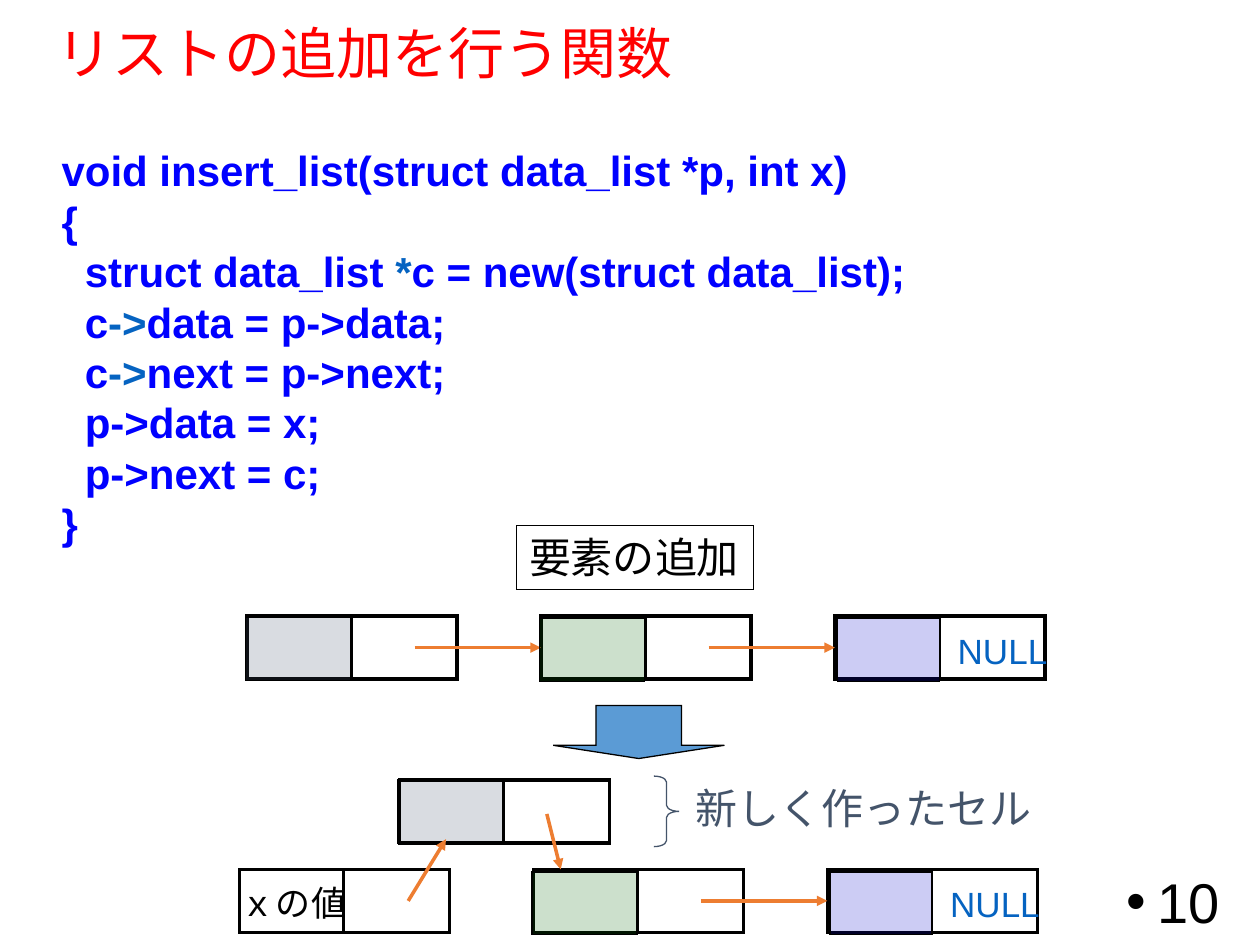
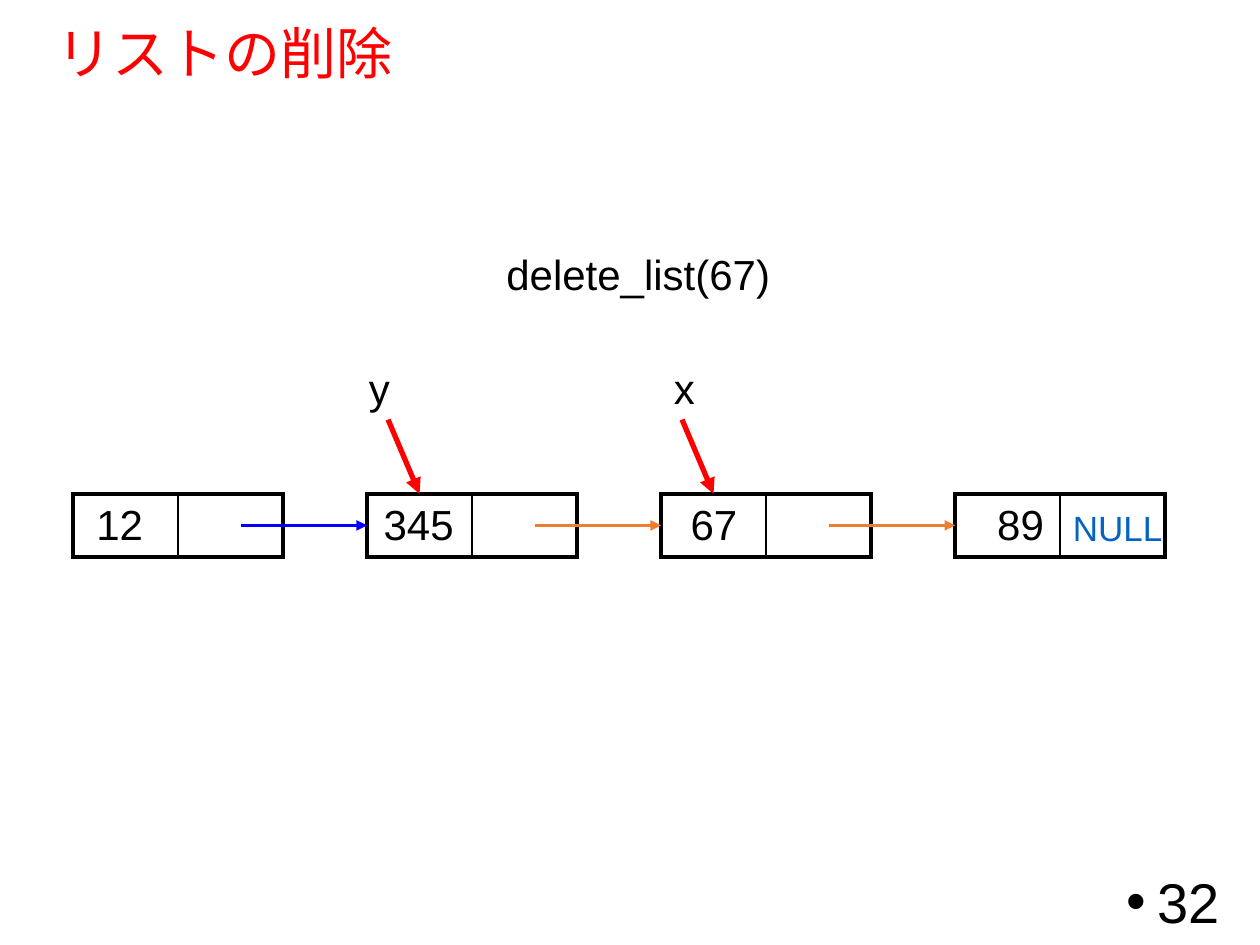
from dataclasses import dataclass

import pptx
import pptx.dml.color
import pptx.enum.shapes
import pptx.enum.text
import pptx.oxml.ns
import pptx.util
from lxml import etree

Inches = pptx.util.Inches
Pt = pptx.util.Pt
Shapes = pptx.enum.shapes.MSO_SHAPE
Align = pptx.enum.text.PP_ALIGN
Anchor = pptx.enum.text.MSO_ANCHOR
qn = pptx.oxml.ns.qn


@dataclass(frozen=True)
class Theme:
    font: str = "Arial"
    black: str = "000000"
    red: str = "FF0000"
    blue: str = "0000FF"
    link: str = "0563C1"
    slate: str = "44546A"
    green: str = "006600"
    indigo: str = "0000C8"
    orange: str = "ED7D31"
    arrow_block: str = "5B9BD5"
    title_size: float = 32
    body_size: float = 24
    small_size: float = 20
    code_leading: float = 28.8
    thin: float = 0.75
    thick: float = 2
    pointer: float = 3
    shade_alpha: int = 20


CELL_WIDTH = 5 / 3
CELL_HEIGHT = 0.5
HALF = CELL_WIDTH / 2
PITCH = 7 / 3
LINK_START = 1.33


class Deck:
    def __init__(self, theme):
        self.theme = theme
        self.presentation = pptx.Presentation()
        self.presentation.slide_width = Inches(10)
        self.presentation.slide_height = Inches(7.5)
        self.slide = None

    def color(self, value):
        return pptx.dml.color.RGBColor.from_string(value)

    def new_slide(self, title, number):
        theme = self.theme
        self.slide = self.presentation.slides.add_slide(self.presentation.slide_layouts[6])
        heading = self.text(0.35, 0.19, 9.25, 0.51, title, size=theme.title_size,
                            color=theme.red, anchor=Anchor.MIDDLE, wrap=True)
        heading.text_frame.paragraphs[0].line_spacing = 0.9
        footer = self.text(7.53, 6.95, 2.25, 0.4, number, size=theme.title_size,
                           anchor=Anchor.MIDDLE, align=Align.RIGHT, wrap=True)
        properties = footer.text_frame.paragraphs[0]._p.get_or_add_pPr()
        properties.set("marL", str(Inches(0.25)))
        properties.set("indent", str(-Inches(0.25)))
        etree.SubElement(properties, qn("a:buFont")).set("typeface", theme.font)
        etree.SubElement(properties, qn("a:buChar")).set("char", "•")

    def run(self, paragraph, text, size, color, bold=False):
        run = paragraph.add_run()
        run.text = text
        run.font.name = self.theme.font
        run.font.size = Pt(size)
        run.font.bold = bold
        run.font.color.rgb = self.color(color)

    def text(self, left, top, width, height, text, size=None, color=None,
             anchor=Anchor.TOP, align=Align.LEFT, wrap=False):
        box = self.slide.shapes.add_textbox(Inches(left), Inches(top), Inches(width), Inches(height))
        frame = box.text_frame
        frame.word_wrap = wrap
        frame.vertical_anchor = anchor
        paragraph = frame.paragraphs[0]
        paragraph.alignment = align
        self.run(paragraph, text, size or self.theme.body_size, color or self.theme.black)
        return box

    def label(self, center, middle, text, size=None, color=None):
        box = self.text(center - 0.5, middle - 0.25, 1, 0.5, text, size, color,
                        Anchor.MIDDLE, Align.CENTER)
        box.text_frame.margin_left = box.text_frame.margin_right = 0

    def code(self, left, top, width, height, lines):
        theme = self.theme
        box = self.slide.shapes.add_textbox(Inches(left), Inches(top), Inches(width), Inches(height))
        frame = box.text_frame
        frame.word_wrap = True
        for index, parts in enumerate(lines):
            paragraph = frame.add_paragraph() if index else frame.paragraphs[0]
            paragraph.line_spacing = Pt(theme.code_leading)
            for position, part in enumerate(parts):
                color = theme.link if position % 2 else theme.blue
                self.run(paragraph, part, theme.body_size, color, bold=True)

    def shape(self, kind, left, top, width, height, fill=None, line=None, weight=None,
              alpha=None, adjustments=()):
        shape = self.slide.shapes.add_shape(
            kind, Inches(left), Inches(top), Inches(width), Inches(height))
        shape.shadow.inherit = False
        shape.line.color.rgb = self.color(line or self.theme.black)
        shape.line.width = Pt(weight or self.theme.thin)
        outline = shape.line._get_or_add_ln()
        etree.SubElement(outline, qn("a:miter")).set("lim", "800000")
        for index, value in enumerate(adjustments):
            shape.adjustments[index] = value
        if fill:
            shape.fill.solid()
            shape.fill.fore_color.rgb = self.color(fill)
        else:
            shape.fill.background()
        if alpha:
            rgb = shape.fill._xPr.find(qn("a:solidFill"))[0]
            etree.SubElement(rgb, qn("a:alpha")).set("val", str(alpha * 1000))
        return shape

    def line(self, start, end, color=None, weight=None, arrow=False):
        connector = self.slide.shapes.add_connector(
            pptx.enum.shapes.MSO_CONNECTOR.STRAIGHT, *(Inches(value) for value in start + end))
        connector.line.color.rgb = self.color(color or self.theme.black)
        connector.line.width = Pt(weight or self.theme.thin)
        if arrow:
            outline = connector.line._get_or_add_ln()
            etree.SubElement(outline, qn("a:tailEnd")).set("type", "triangle")
        etree.SubElement(connector._element.spPr, qn("a:effectLst"))
        return connector

    def link(self, start, end, color=None):
        return self.line(start, end, color or self.theme.orange, self.theme.thick, arrow=True)

    def cell(self, left, top):
        frame = self.shape(Shapes.RECTANGLE, left, top, CELL_WIDTH, CELL_HEIGHT,
                           weight=self.theme.thick)
        self.line((left + HALF, top), (left + HALF, top + CELL_HEIGHT))
        return frame

    def half(self, left, top, fill=None, width=HALF):
        self.shape(Shapes.RECTANGLE, left, top, width, CELL_HEIGHT, fill,
                   alpha=self.theme.shade_alpha if fill else None)

    def row(self, left, top, count):
        return [self.cell(left + index * PITCH, top) for index in range(count)]

    def chain(self, cells, left, top, colors):
        middle = top + CELL_HEIGHT / 2
        for index, color in enumerate(colors):
            if color:
                start = left + index * PITCH
                connector = self.link((start + LINK_START, middle), (start + PITCH, middle), color)
                connector.end_connect(cells[index + 1], 1)

    def null(self, center, top):
        self.label(center, top + CELL_HEIGHT / 2 + 0.02, "NULL",
                   self.theme.small_size, self.theme.link)


def build_insertion(deck):
    theme = deck.theme
    deck.new_slide("リストの追加を行う関数", "10")
    deck.code(0.39, 1.1, 9.61, 4.05, [
        ["void insert_list(struct data_list *p, int x)"],
        ["{"],
        ["  struct data_list ", "*", "c = new(struct data_list);"],
        ["  c", "->", "data = p->data;"],
        ["  c", "->", "next = p->next;"],
        ["  p->data = x;"],
        ["  p->next = c;"],
        ["}"],
    ])
    deck.shape(Shapes.RECTANGLE, 4.1, 4.17, 1.88, 0.51)
    deck.text(4.1, 4.17, 1.88, 0.51, "要素の追加")

    before, after = (1.96, 4.89), (1.9, 6.9)
    for (left, top), colors in ((before, [theme.orange] * 2), (after, [None, theme.orange])):
        cells = deck.row(left, top, 3)
        deck.chain(cells, left, top, colors)
        deck.half(left + PITCH - 0.01, top + 0.02, theme.green)
        deck.half(left + 2 * PITCH + 0.02, top + 0.02, theme.indigo, 0.81)
        deck.null(left + 2 * PITCH + 1.33, top)

    deck.half(1.95, 4.9, theme.slate)
    deck.shape(Shapes.DOWN_ARROW, 4.39, 5.6, 1.36, 0.42, theme.arrow_block,
               adjustments=(0.5, 0.25))
    deck.half(1.89, 6.91)
    deck.label(2.33, 7.16, "ｘの値", theme.small_size)
    deck.half(3.16, 6.19, theme.slate)
    deck.cell(3.17, 6.19)
    deck.link((3.24, 7.15), (3.54, 6.66))
    deck.link((4.34, 6.46), (4.45, 6.9))
    deck.shape(Shapes.RIGHT_BRACE, 5.19, 6.16, 0.2, 0.56, line=theme.slate,
               adjustments=(0.24, 0.5))
    deck.text(5.42, 6.16, 2.89, 0.5, "新しく作ったセル", color=theme.slate)


def build_deletion(deck):
    theme = deck.theme
    deck.new_slide("リストの削除", "32")
    left, top = 0.58, 3.92
    cells = deck.row(left, top, 4)
    deck.chain(cells, left, top, [theme.blue, theme.orange, theme.orange])
    values = (("12", 0.37), ("345", 0.41), ("67", 0.42), ("89", 0.52))
    for index, (value, offset) in enumerate(values):
        deck.label(left + index * PITCH + offset, top + CELL_HEIGHT / 2 - 0.01, value)
    deck.null(left + 3 * PITCH + 1.29, top)
    deck.text(3.92, 1.92, 2.32, 0.5, "delete_list(67)")
    for index, name, name_left in ((1, "y", 2.83), (2, "x", 5.25)):
        target = left + index * PITCH + HALF / 2
        deck.text(name_left, 2.83, 0.37, 0.5, name)
        deck.line((target - 0.25, 3.33), (target, top), theme.red, theme.pointer, arrow=True)


def main():
    deck = Deck(Theme())
    build_insertion(deck)
    build_deletion(deck)
    deck.presentation.save("out.pptx")


if __name__ == "__main__":
    main()
